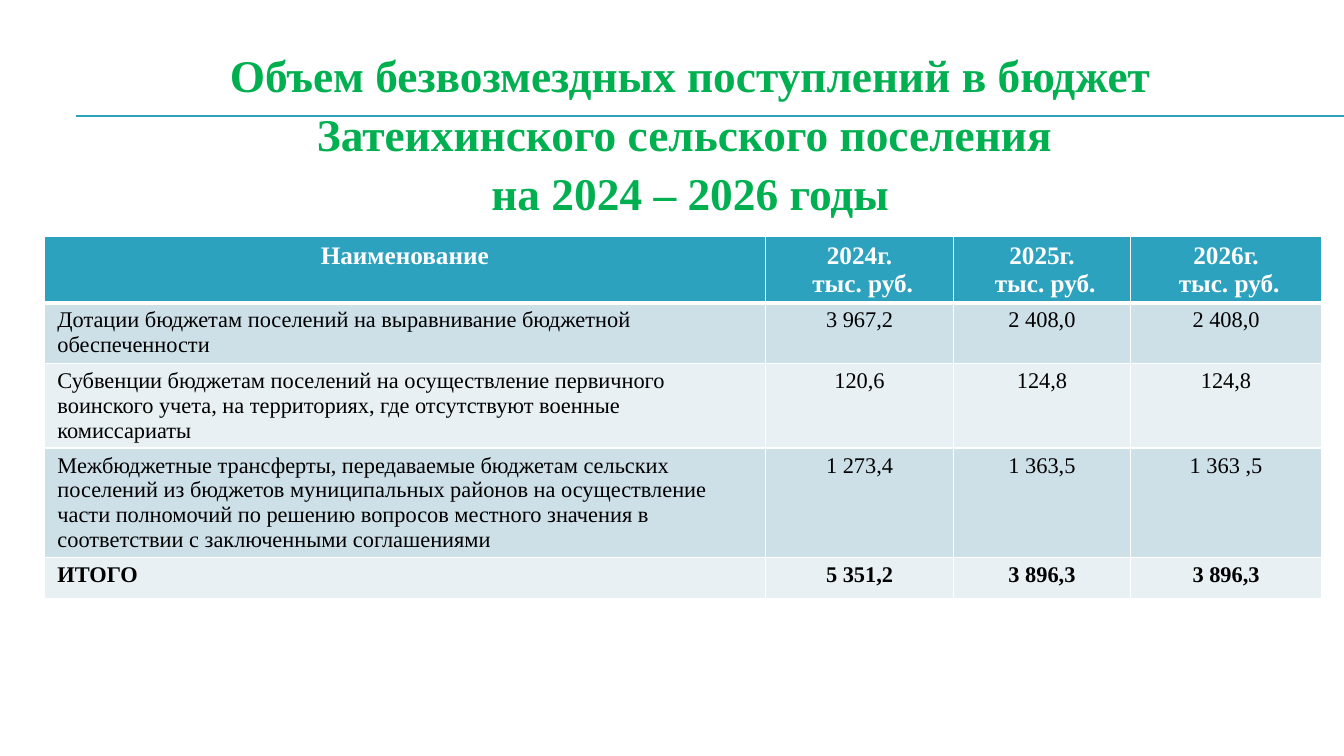
"""Build a slide with the table of budget transfers for 2024 – 2026."""
import lxml.etree
import pptx
import pptx.dml.color
import pptx.enum.shapes
import pptx.enum.text
import pptx.oxml
import pptx.oxml.ns
import pptx.util
from pptx.util import Inches

TITLE = ("Объем безвозмездных поступлений в бюджет "
         "Затеихинского сельского поселения \vна 2024 – 2026 годы")
ROWS = [
    ("Наименование", "2024г.\n тыс. руб.", "2025г.\n тыс. руб.", "2026г.\n тыс. руб."),
    ("Дотации бюджетам поселений на выравнивание бюджетной обеспеченности",
     "3 967,2", "2 408,0", "2 408,0"),
    ("Субвенции бюджетам поселений на осуществление первичного воинского учета, "
     "на территориях, где отсутствуют военные комиссариаты",
     "120,6", "124,8", "124,8"),
    ("Межбюджетные трансферты, передаваемые бюджетам сельских поселений из бюджетов "
     "муниципальных районов на осуществление части полномочий по решению вопросов "
     "местного значения в соответствии с заключенными соглашениями",
     "1 273,4", "1 363,5", "1 363 ,5"),
    ("ИТОГО", "5 351,2", "3 896,3", "3 896,3"),
]
COLUMN_WIDTHS = [7.15, 1.87, 1.75, 1.9]
ROW_HEIGHTS = [0.64, 0.6, 0.84, 1.09, 0.4]
RULE_LEVELS = [1.15, 1.16]
COLORS = {"title": "00B050", "accent": "2DA2BF", "odd": "CDE0E8", "even": "E8F0F4",
          "white": "FFFFFF", "text": "000000"}
FONT = "Times New Roman"
CENTER = pptx.enum.text.PP_ALIGN.CENTER


def rgb(name):
    return pptx.dml.color.RGBColor.from_string(COLORS[name])


def style(paragraph, size, color, bold, align):
    paragraph.alignment = align
    paragraph.font.name = FONT
    paragraph.font.size = pptx.util.Pt(size)
    paragraph.font.bold = bold
    paragraph.font.color.rgb = rgb(color)


def set_borders(cell, top, bottom):
    properties = cell._tc.get_or_add_tcPr()
    for place, (side, width) in enumerate([("L", 1), ("R", 1), ("T", top), ("B", bottom)]):
        properties.insert(place, pptx.oxml.parse_xml(
            f'<a:ln{side} {pptx.oxml.ns.nsdecls("a")} w="{pptx.util.Pt(width)}"><a:solidFill>'
            f'<a:srgbClr val="{COLORS["white"]}"/></a:solidFill></a:ln{side}>'))


def add_rules(slide):
    for level in RULE_LEVELS:
        rule = slide.shapes.add_connector(
            pptx.enum.shapes.MSO_CONNECTOR.STRAIGHT,
            Inches(0.75), Inches(level), Inches(13.33), Inches(level))
        rule.line.color.rgb = rgb("accent")
        rule.line.width = pptx.util.Pt(0.75)
        lxml.etree.SubElement(rule._element.spPr, pptx.oxml.ns.qn("a:effectLst"))
        slide.shapes._spTree.insert(2, rule._element)


def add_title(slide):
    title = slide.shapes.title
    title.left, title.top, title.width, title.height = map(Inches, (0.74, 0.49, 12.21, 1.62))
    title.text_frame.text = TITLE
    title.text_frame.word_wrap = True
    title.text_frame.auto_size = pptx.enum.text.MSO_AUTO_SIZE.NONE
    title.text_frame.vertical_anchor = pptx.enum.text.MSO_ANCHOR.MIDDLE
    style(title.text_frame.paragraphs[0], 32.4, "title", True, CENTER)
    title.text_frame.paragraphs[0].line_spacing = 1.08


def add_transfers(slide):
    transfers = slide.shapes.add_table(
        len(ROWS), len(COLUMN_WIDTHS), Inches(0.44), Inches(2.35),
        Inches(sum(COLUMN_WIDTHS)), Inches(sum(ROW_HEIGHTS))).table
    for column, width in zip(transfers.columns, COLUMN_WIDTHS):
        column.width = Inches(width)
    for r, (row, height) in enumerate(zip(ROWS, ROW_HEIGHTS)):
        transfers.rows[r].height = Inches(height)
        header = r == 0
        bold = header or r == len(ROWS) - 1
        fill = "accent" if header else "odd" if r % 2 else "even"
        for c, text in enumerate(row):
            cell = transfers.cell(r, c)
            cell.text = text
            cell.margin_left = cell.margin_right = Inches(0.13)
            cell.margin_top = cell.margin_bottom = Inches(0.05)
            cell.fill.solid()
            cell.fill.fore_color.rgb = rgb(fill)
            set_borders(cell, 3 if r == 1 else 1, 3 if header else 1)
            align = CENTER if header or c else pptx.enum.text.PP_ALIGN.LEFT
            for paragraph in cell.text_frame.paragraphs:
                style(paragraph, 18 if header else 16, "white" if header else "text", bold, align)


def main():
    deck = pptx.Presentation()
    deck.slide_width, deck.slide_height = Inches(13.33), Inches(7.5)
    slide = deck.slides.add_slide(deck.slide_layouts[5])
    add_rules(slide)
    add_title(slide)
    add_transfers(slide)
    deck.save("out.pptx")


if __name__ == "__main__":
    main()
